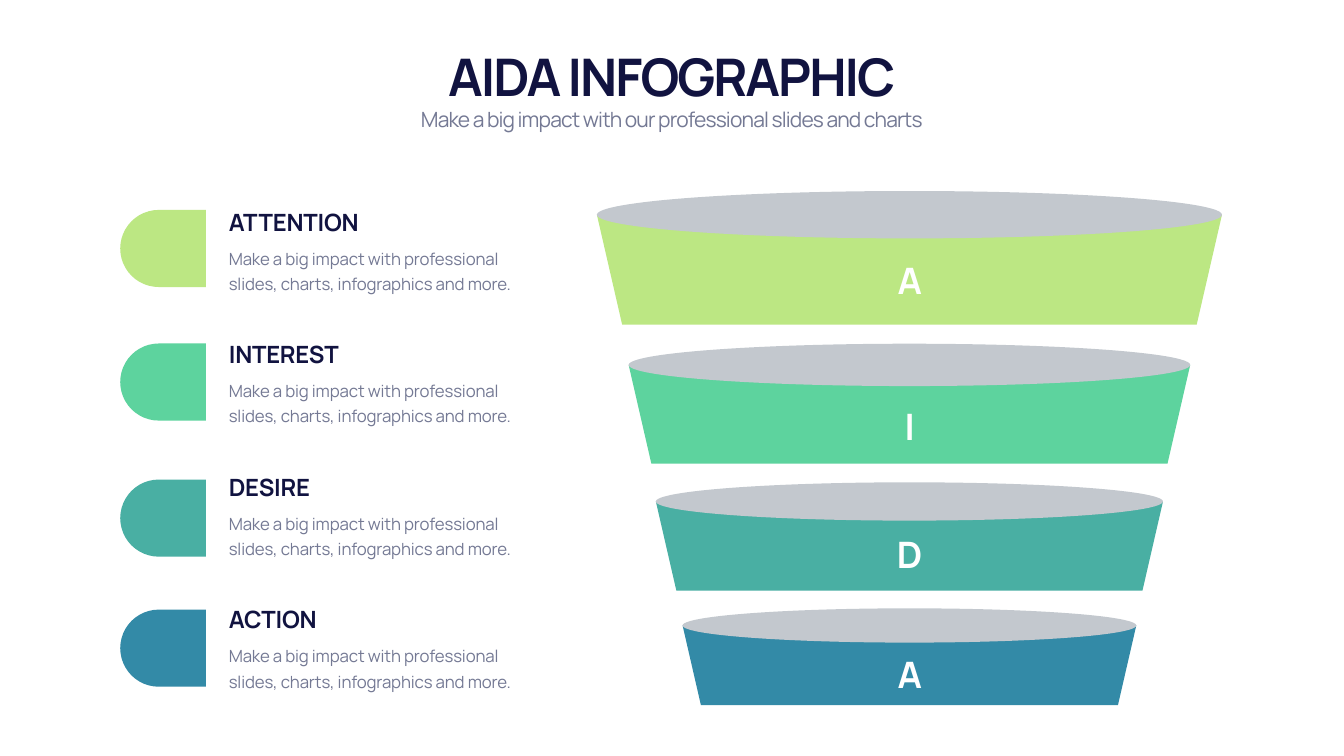
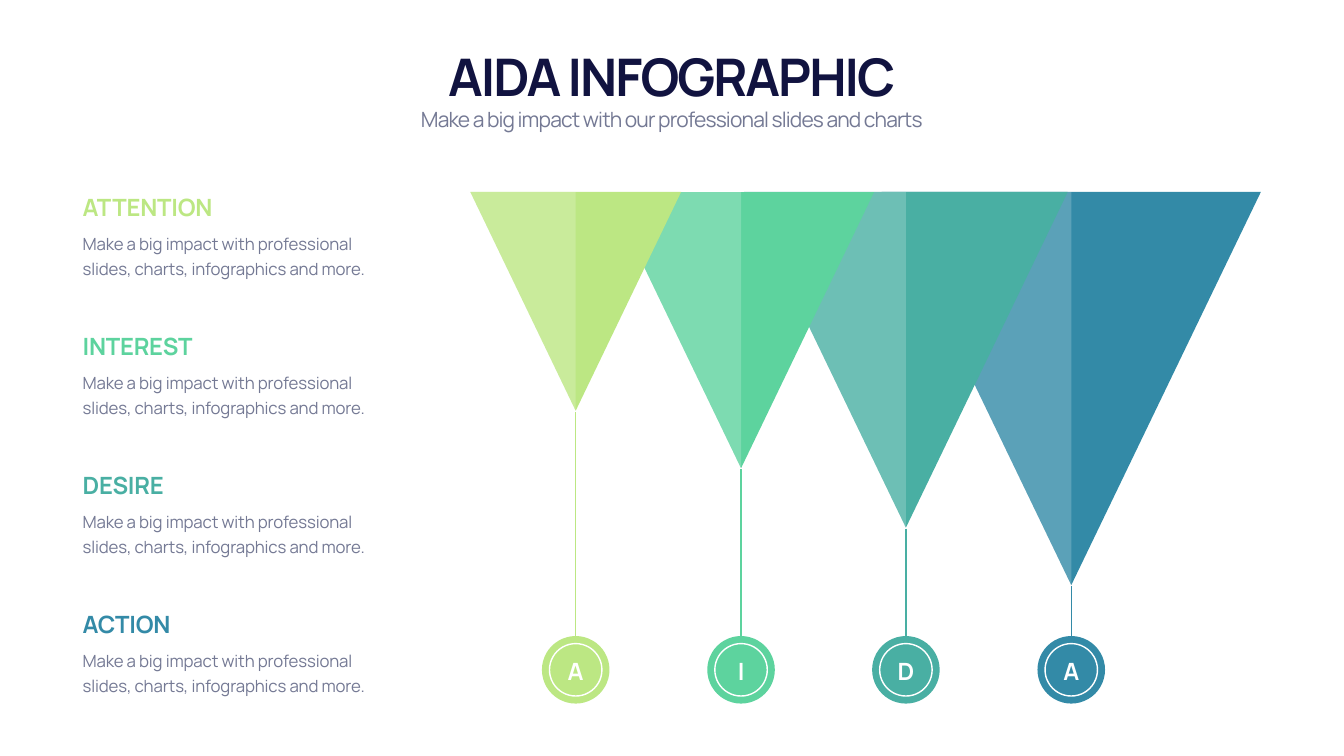
import pptx
import pptx.dml.color
import pptx.enum.dml
import pptx.enum.shapes
import pptx.enum.text
import pptx.oxml
import pptx.util
from pptx.util import Inches

SHAPE = pptx.enum.shapes.MSO_SHAPE
ALIGN = pptx.enum.text.PP_ALIGN
ANCHOR = pptx.enum.text.MSO_ANCHOR

# Colours and type sizes (points; spacing in hundredths of a point)
THEME = {
    "font": "Manrope",
    "navy": "111340",
    "gray": "747994",
    "rim": "C3C8CE",
    "white": "FFFFFF",
    "stages": ["BCE783", "5DD39E", "49AFA3", "338AA7"],
    "title": {"size": 74, "bold": True, "spacing": -290},
    "subtitle": {"size": 30, "bold": False, "spacing": -120},
    "heading": {"size": 34, "bold": True, "spacing": -30},
    "body": {"size": 24, "bold": False, "spacing": -20, "line": 36},
    "letter": {"size": 52, "bold": True, "spacing": -30},
}
STAGES = ["ATTENTION", "INTEREST", "DESIRE", "ACTION"]
BLURB = "Make a big impact with professional slides, charts, infographics and more."


def paint(shape, fill, opacity=100):
    shape.shadow.inherit = False
    shape.line.fill.background()
    shape.fill.solid()
    shape.fill.fore_color.rgb = pptx.dml.color.RGBColor.from_string(fill)
    if opacity < 100:
        color = shape.fill._xPr.find(".//" + pptx.oxml.ns.qn("a:srgbClr"))
        alpha = pptx.oxml.parse_xml(f'<a:alpha {pptx.oxml.ns.nsdecls("a")}/>')
        alpha.set("val", str(opacity * 1000))
        color.append(alpha)


def write(shape, text, style, color, align=ALIGN.LEFT, anchor=ANCHOR.TOP):
    kind = THEME[style]
    frame = shape.text_frame
    frame_format = {
        "word_wrap": True,
        "auto_size": pptx.enum.text.MSO_AUTO_SIZE.SHAPE_TO_FIT_TEXT,
        "vertical_anchor": anchor,
    }
    for name, value in frame_format.items():
        setattr(frame, name, value)
    paragraph = frame.paragraphs[0]
    paragraph.alignment = align
    if "line" in kind:
        paragraph.line_spacing = pptx.util.Pt(kind["line"])
    run = paragraph.add_run()
    run.text = text
    font_format = {
        "name": THEME["font"],
        "size": pptx.util.Pt(kind["size"]),
        "bold": kind["bold"],
    }
    for name, value in font_format.items():
        setattr(run.font, name, value)
    run.font.color.rgb = pptx.dml.color.RGBColor.from_string(color)
    run._r.get_or_add_rPr().set("spc", str(kind["spacing"]))


deck = pptx.Presentation()
deck.slide_width = Inches(26.66)
deck.slide_height = Inches(15)
title_only = deck.slide_layouts[5]
funnel_slide = deck.slides.add_slide(title_only)
triangle_slide = deck.slides.add_slide(title_only)

# Title and subtitle on both slides
for slide in (funnel_slide, triangle_slide):
    title = slide.shapes.title
    title_place = {"left": 1.66, "top": 0.82, "width": 23.33, "height": 1.35}
    for name, value in title_place.items():
        setattr(title, name, Inches(value))
    write(title, "AIDA INFOGRAPHIC", "title", THEME["navy"], ALIGN.CENTER, ANCHOR.BOTTOM)
    subtitle = slide.shapes.add_textbox(*map(Inches, (1.66, 2.07, 23.33, 0.61)))
    write(subtitle, "Make a big impact with our professional slides and charts",
          "subtitle", THEME["gray"], ALIGN.CENTER)

# Stage descriptions on both slides
descriptions = [
    (funnel_slide, 4.44, 4.06, 11.95, [THEME["navy"]] * 4),
    (triangle_slide, 1.54, 3.77, 12.04, THEME["stages"]),
]
for slide, left, first, last, colors in descriptions:
    for row, (stage, color) in enumerate(zip(STAGES, colors)):
        top = first + row * (last - first) / 3
        heading = slide.shapes.add_textbox(*map(Inches, (left, top, 6.38, 0.67)))
        write(heading, stage, "heading", color, anchor=ANCHOR.BOTTOM)
        body = slide.shapes.add_textbox(*map(Inches, (left, top + 0.72, 6.38, 1.09)))
        write(body, BLURB, "body", THEME["gray"])

# Slide 1: funnel tiers (width, rim top, rim height, tier bottom, letter top, tab top)
FUNNEL_CENTER = 18.04
tiers = [
    (12.40, 3.79, 0.94, 6.44, 5.06, 4.08),
    (11.14, 6.82, 0.84, 9.20, 7.96, 6.73),
    (10.06, 9.57, 0.76, 11.72, 10.51, 9.43),
    (9.00, 12.07, 0.68, 13.99, 12.88, 12.01),
]
for stage, color, tier in zip(STAGES, THEME["stages"], tiers):
    width, rim_top, rim_height, bottom, letter_top, tab_top = tier
    left, right = FUNNEL_CENTER - width / 2, FUNNEL_CENTER + width / 2
    shoulder = rim_top + rim_height / 2
    taper = 0.23 * (bottom - shoulder)
    outline = [(left, shoulder), (right, shoulder), (right - taper, bottom), (left + taper, bottom)]
    corners = [(Inches(x), Inches(y)) for x, y in outline]
    wall = funnel_slide.shapes.build_freeform(*corners[0])
    wall.add_line_segments(corners[1:])
    paint(wall.convert_to_shape(), color)

    rim = funnel_slide.shapes.add_shape(
        SHAPE.OVAL, *map(Inches, (left, rim_top, width, rim_height)))
    paint(rim, THEME["rim"])

    letter = funnel_slide.shapes.add_textbox(
        *map(Inches, (FUNNEL_CENTER - 0.6, letter_top, 1.21, 0.98)))
    write(letter, stage[0], "letter", THEME["white"], ALIGN.CENTER, ANCHOR.MIDDLE)

    # Colour tab beside the description, rounded on the left
    tab = funnel_slide.shapes.add_shape(
        SHAPE.ROUND_2_SAME_RECTANGLE, *map(Inches, (2.47, tab_top, 1.53, 1.7)))
    tab.rotation = 270
    tab.adjustments[0] = 0.5
    tab.adjustments[1] = 0
    paint(tab, color)

# Slide 2: triangles (tip x, half width, height), largest at the back
TRIANGLE_TOP = 3.81
BADGE_CENTER = 13.29
triangles = [(11.42, 2.09, 4.34), (14.7, 2.64, 5.48), (17.97, 3.21, 6.66), (21.25, 3.76, 7.8)]
stages = list(zip(STAGES, THEME["stages"], triangles))
for stage, color, (tip, half, height) in reversed(stages):
    left = tip - half
    for right, fill, opacity in ((tip + half, color, 100), (tip, THEME["white"], 20)):
        outline = [(left, TRIANGLE_TOP), (tip, TRIANGLE_TOP + height), (right, TRIANGLE_TOP)]
        corners = [(Inches(x), Inches(y)) for x, y in outline]
        face = triangle_slide.shapes.build_freeform(*corners[0])
        face.add_line_segments(corners[1:])
        paint(face.convert_to_shape(), fill, opacity)

# Letter badges, each hung from a triangle tip
for stage, color, (tip, half, height) in stages:
    badge = triangle_slide.shapes.add_shape(
        SHAPE.OVAL, *map(Inches, (tip - 0.67, BADGE_CENTER - 0.67, 1.34, 1.34)))
    paint(badge, color)

    stem_top = TRIANGLE_TOP + height + 0.02
    stem = triangle_slide.shapes.add_connector(
        pptx.enum.shapes.MSO_CONNECTOR.STRAIGHT,
        *map(Inches, (tip, stem_top, tip, BADGE_CENTER - 0.67)))
    stem.end_connect(badge, 0)
    stem.line.color.rgb = pptx.dml.color.RGBColor.from_string(color)
    stem.line.width = pptx.util.Pt(2)
    stem._element.spPr.append(
        pptx.oxml.parse_xml(f'<a:effectLst {pptx.oxml.ns.nsdecls("a")}/>'))

    ring = triangle_slide.shapes.add_shape(
        SHAPE.OVAL, *map(Inches, (tip - 0.52, BADGE_CENTER - 0.52, 1.04, 1.04)))
    ring.shadow.inherit = False
    ring.fill.background()
    ring.line.color.rgb = pptx.dml.color.RGBColor.from_string(THEME["white"])
    ring.line.width = pptx.util.Pt(2)

    letter = triangle_slide.shapes.add_textbox(
        *map(Inches, (tip - 0.36, 12.98, 0.72, 0.67)))
    write(letter, stage[0], "heading", THEME["white"], ALIGN.CENTER, ANCHOR.MIDDLE)

deck.save("out.pptx")
